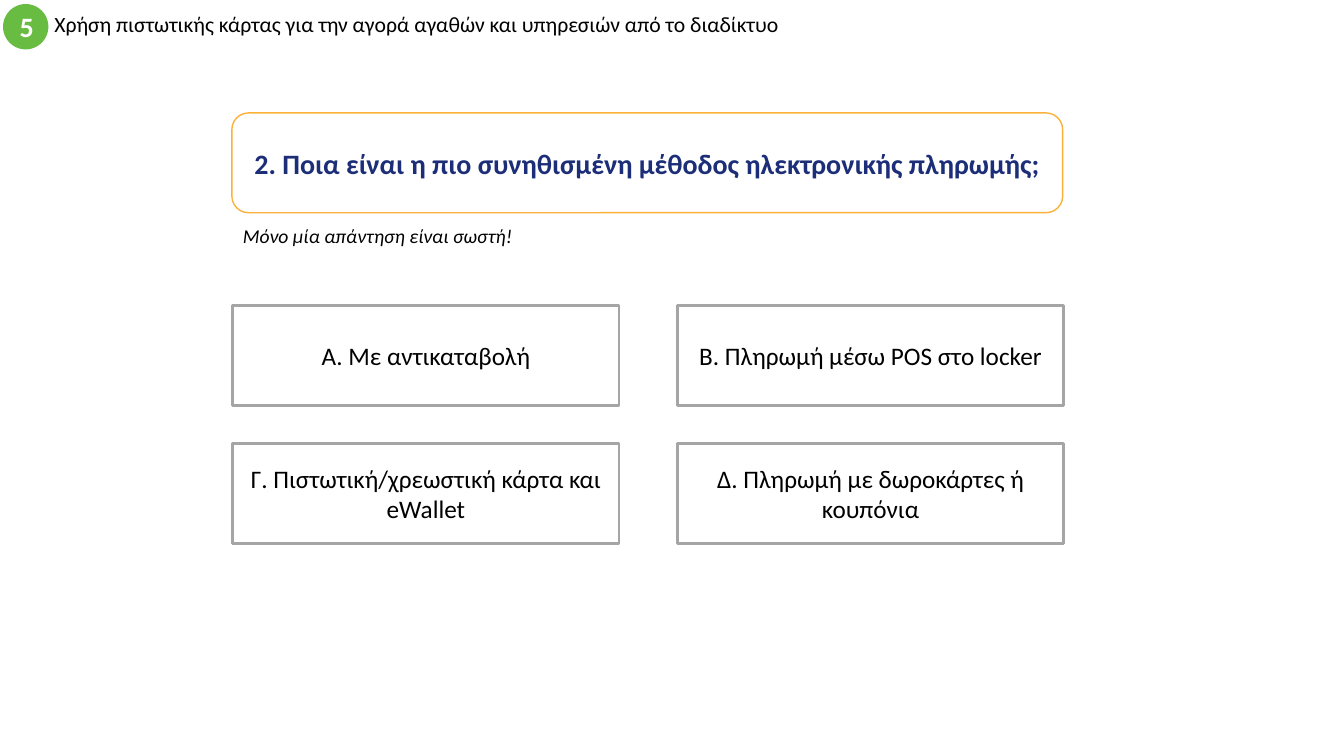
from pptx import Presentation
from pptx.dml.color import RGBColor
from pptx.enum import shapes, text
from pptx.util import Inches, Pt


def rgb(value):
    """Turn a hex string into a colour."""
    return RGBColor.from_string(value)


def write(sp, content, size, color="000000", bold=False, italic=False,
          align=text.PP_ALIGN.CENTER, anchor=text.MSO_ANCHOR.MIDDLE):
    """Set one formatted paragraph in a shape and return it."""
    tf = sp.text_frame
    tf.word_wrap = True
    tf.vertical_anchor = anchor
    p = tf.paragraphs[0]
    p.text = content
    p.alignment = align
    for r in p.runs:
        r.font.name = "Calibri"
        r.font.size = Pt(size)
        r.font.bold = bold
        r.font.italic = italic
        r.font.color.rgb = rgb(color)
    return p


def add_label(s, box, content, size, **style):
    """Add a left-aligned text box and return its paragraph."""
    sp = s.shapes.add_textbox(*map(Inches, box))
    return write(sp, content, size, align=text.PP_ALIGN.LEFT, **style)


def add_panel(s, kind, box, fill, line=None, width=1):
    """Add a filled shape with an optional outline."""
    sp = s.shapes.add_shape(kind, *map(Inches, box))
    sp.shadow.inherit = False
    sp.fill.solid()
    sp.fill.fore_color.rgb = rgb(fill)
    if line:
        sp.line.color.rgb = rgb(line)
        sp.line.width = Pt(width)
    else:
        sp.line.fill.background()
    return sp


def add_answers(s, answers):
    """Lay out the answer boxes in two columns."""
    for i, answer in enumerate(answers):
        row, col = divmod(i, 2)
        box = (2.31 + col * 4.41, 3.03 + row * 1.37, 3.83, 0.99)
        sp = add_panel(s, shapes.MSO_SHAPE.RECTANGLE, box, "FFFFFF", "A5A5A5", 2)
        write(sp, answer, 18)


def main():
    """Build the quiz slide."""
    prs = Presentation()
    prs.slide_width, prs.slide_height = Inches(13.33), Inches(7.5)
    s = prs.slides.add_slide(prs.slide_layouts[6])

    heading = add_label(
        s, (0.44, 0.04, 8, 0.45),
        "Χρήση πιστωτικής κάρτας για την αγορά αγαθών και υπηρεσιών από το διαδίκτυο",
        15.5)
    heading.line_spacing = 0.7
    badge = add_panel(s, shapes.MSO_SHAPE.OVAL, (0.03, 0.04, 0.45, 0.45), "68BC42")
    write(badge, "5", 20, "FFFFFF", bold=True)

    question = add_panel(s, shapes.MSO_SHAPE.ROUNDED_RECTANGLE,
                         (2.3, 1.12, 8.24, 0.99), "FFFFFF", "FCB13A")
    write(question, "2. Ποια είναι η πιο συνηθισμένη μέθοδος ηλεκτρονικής πληρωμής;",
          20, "1C2E78", bold=True)
    add_label(s, (2.31, 2.17, 3.83, 0.34), "Μόνο μία απάντηση είναι σωστή!", 14,
              italic=True, anchor=text.MSO_ANCHOR.TOP)

    add_answers(s, [
        "A. Με αντικαταβολή",
        "B. Πληρωμή μέσω POS στο locker",
        "Γ. Πιστωτική/χρεωστική κάρτα και eWallet",
        "Δ. Πληρωμή με δωροκάρτες ή κουπόνια",
    ])
    prs.save("out.pptx")


if __name__ == "__main__":
    main()
